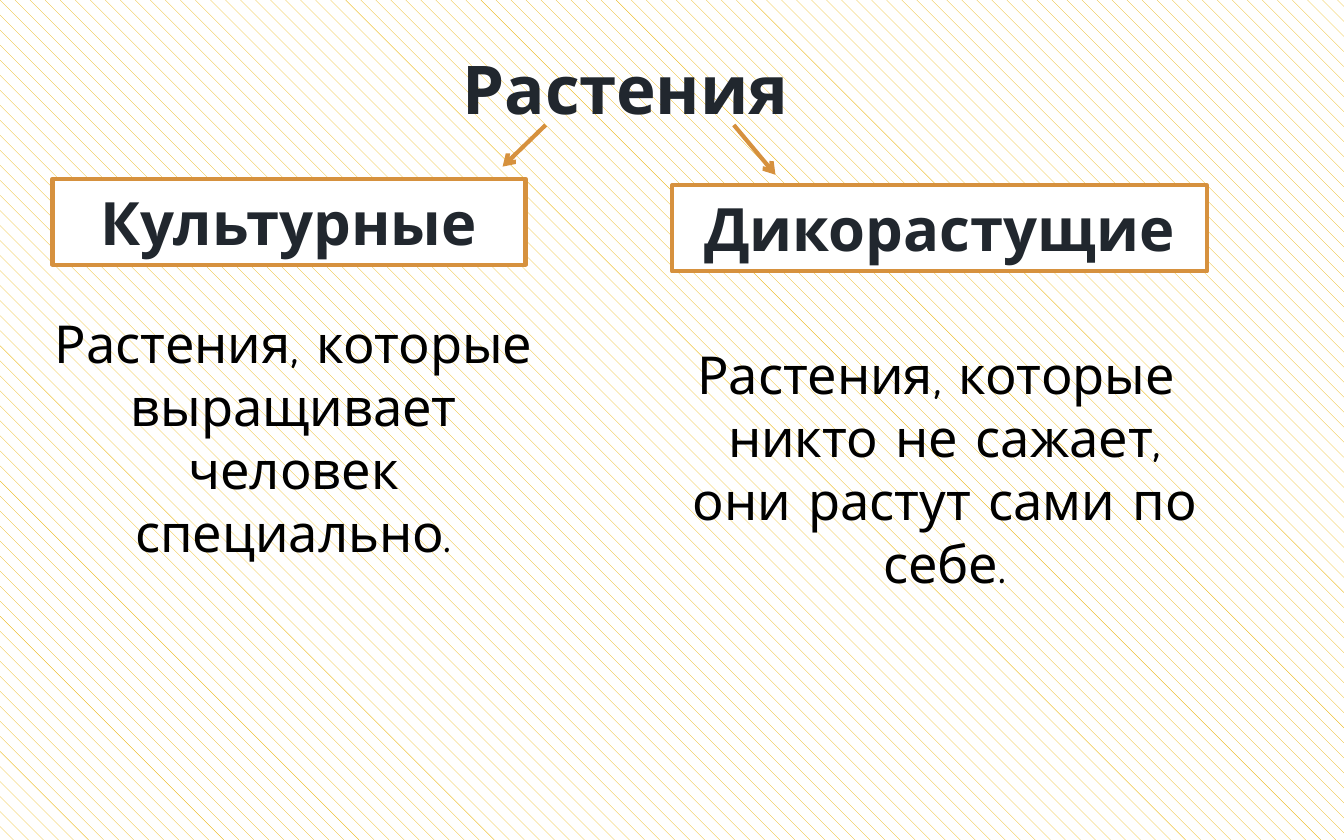
from dataclasses import dataclass

from lxml import etree
from pptx import Presentation
from pptx.dml.color import RGBColor
from pptx.enum.dml import MSO_PATTERN
from pptx.enum.shapes import MSO_CONNECTOR, MSO_SHAPE
from pptx.enum.text import MSO_ANCHOR, PP_ALIGN
from pptx.oxml.ns import qn
from pptx.util import Inches, Pt

SHINGLE = MSO_PATTERN.SHINGLE
RECTANGLE = MSO_SHAPE.RECTANGLE
STRAIGHT = MSO_CONNECTOR.STRAIGHT
CENTER = PP_ALIGN.CENTER
TOP, MIDDLE = MSO_ANCHOR.TOP, MSO_ANCHOR.MIDDLE


@dataclass(frozen=True)
class Theme:
    """Colours, font and sizes of the slide."""
    font: str = "Comic Neue"
    dark: RGBColor = RGBColor(0x21, 0x27, 0x2E)
    black: RGBColor = RGBColor(0, 0, 0)
    white: RGBColor = RGBColor(0xFF, 0xFF, 0xFF)
    accent: RGBColor = RGBColor(0xD6, 0x91, 0x3E)
    stripe: RGBColor = RGBColor(0xEA, 0xB2, 0x00)
    title_size: float = 36
    heading_size: float = 32
    body_size: float = 28
    line_width: float = 2.25


THEME = Theme()


def write(frame, text, size, color=THEME.dark, bold=False, anchor=TOP):
    """Fill a text frame with centred paragraphs, one per line of text."""
    frame.word_wrap = True
    frame.vertical_anchor = anchor
    for index, line in enumerate(text.split("\n")):
        paragraph = frame.add_paragraph() if index else frame.paragraphs[0]
        paragraph.alignment = CENTER
        run = paragraph.add_run()
        run.text = line
        run.font.name = THEME.font
        run.font.size = Pt(size)
        run.font.bold = bold
        run.font.color.rgb = color


def outline(line):
    """Give a line the accent colour and common width."""
    line.color.rgb = THEME.accent
    line.width = Pt(THEME.line_width)


def paint_background(slide):
    """Cover the slide with the shingle pattern."""
    fill = slide.background.fill
    fill.patterned()
    fill.pattern = SHINGLE
    fill.fore_color.rgb = THEME.stripe
    fill.back_color.rgb = THEME.white


def add_text(slide, area, text, size, **style):
    """Add a plain text box."""
    box = slide.shapes.add_textbox(*map(Inches, area))
    write(box.text_frame, text, size, **style)


def add_heading(slide, area, text):
    """Add a framed group name."""
    heading = slide.shapes.add_shape(RECTANGLE, *map(Inches, area))
    heading.shadow.inherit = False
    heading.fill.solid()
    heading.fill.fore_color.rgb = THEME.white
    outline(heading.line)
    write(heading.text_frame, text, THEME.heading_size, bold=True)


def add_arrow(slide, start, end):
    """Add an arrow from start to end."""
    arrow = slide.shapes.add_connector(STRAIGHT, *map(Inches, start + end))
    outline(arrow.line)
    etree.SubElement(arrow.line._get_or_add_ln(), qn("a:tailEnd"), type="arrow")
    etree.SubElement(arrow._element.spPr, qn("a:effectLst"))


def main():
    """Build the slide on the two groups of plants."""
    deck = Presentation()
    deck.slide_width, deck.slide_height = Inches(10), Inches(6.25)
    slide = deck.slides.add_slide(deck.slide_layouts[6])
    paint_background(slide)
    add_text(slide, (2.45, 0.13, 4.41, 1.04), "Растения", THEME.title_size,
             bold=True, anchor=MIDDLE)

    cultivated = "Растения, которые \nвыращивает человек специально."
    wild = "Растения, которые \nникто не сажает,\nони растут сами по себе."
    groups = [
        ("Культурные", (0.39, 1.33, 3.52, 0.64),
         cultivated, (0.31, 2.27, 3.75, 1.99), (4.06, 0.93), (3.74, 1.24)),
        ("Дикорастущие", (5, 1.38, 3.98, 0.64),
         wild, (5, 2.5, 4.06, 1.99), (5.46, 0.93), (5.77, 1.3)),
    ]
    for name, name_area, meaning, meaning_area, start, end in groups:
        add_text(slide, meaning_area, meaning, THEME.body_size, color=THEME.black)
        add_heading(slide, name_area, name)
        add_arrow(slide, start, end)
    deck.save("out.pptx")


if __name__ == "__main__":
    main()
